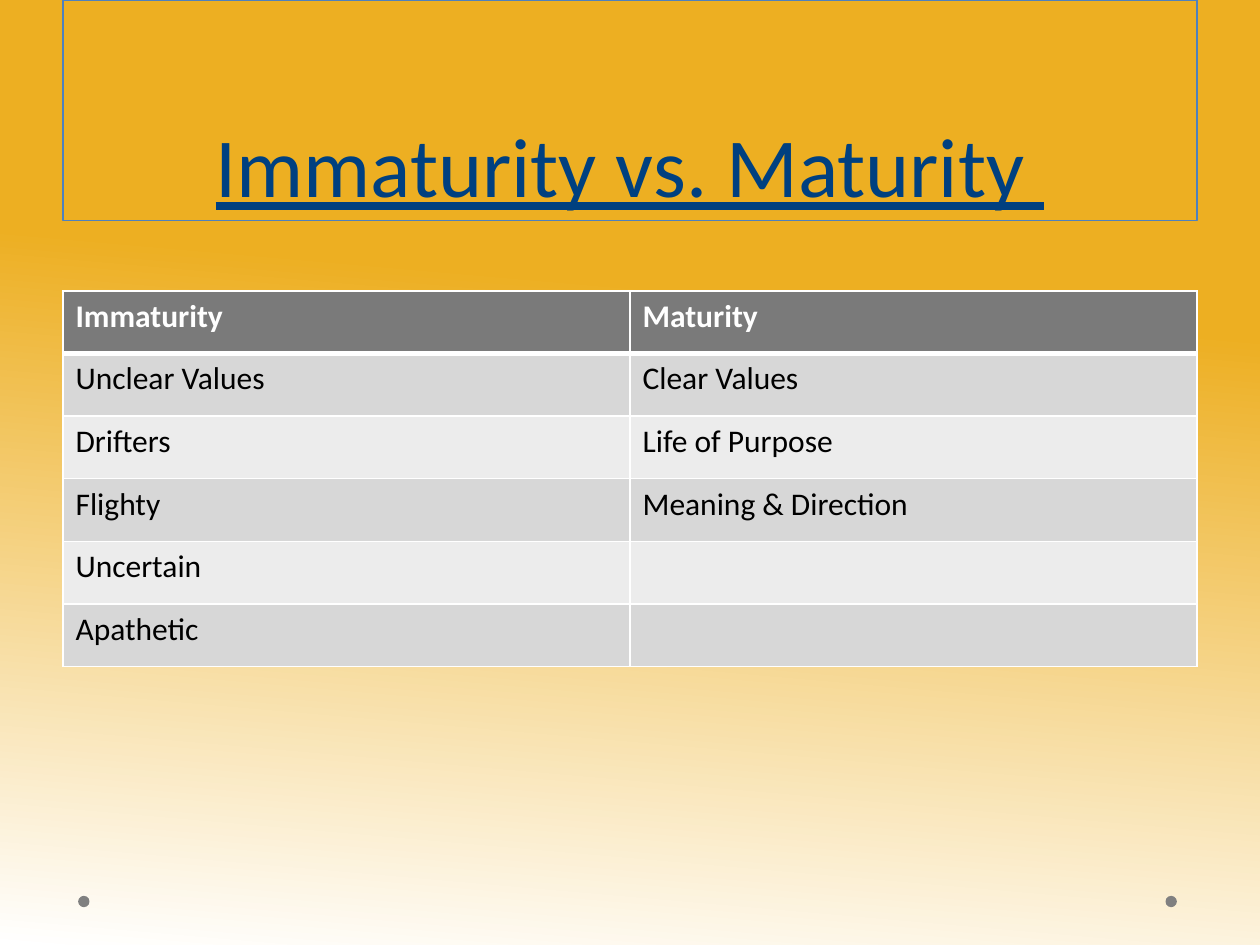
from dataclasses import dataclass

from lxml.etree import SubElement
from pptx import Presentation
from pptx.dml.color import RGBColor
from pptx.enum.shapes import MSO_SHAPE
from pptx.enum.text import MSO_ANCHOR, PP_ALIGN
from pptx.oxml.ns import qn
from pptx.util import Pt

EMU_PER_PX = 9144
FONT = "Calibri"
HEADER_FILL = "7A7A7A"
BAND_FILLS = ("D7D7D7", "ECECEC")
WHITE = "FFFFFF"


@dataclass
class Area:
    left: int
    top: int
    width: int
    height: int

    def emu(self) -> list[int]:
        return [px(n) for n in (self.left, self.top, self.width, self.height)]


TITLE_AREA = Area(50, 0, 900, 175)
TABLE_AREA = Area(50, 231, 900, 298)
DOTS = [Area(925, 711, 9, 9), Area(62, 711, 9, 9)]
ROWS = [
    ("Immaturity", "Maturity"),
    ("Unclear Values", "Clear Values"),
    ("Drifters", "Life of Purpose"),
    ("Flighty", "Meaning & Direction"),
    ("Uncertain", ""),
    ("Apathetic", ""),
]


def px(length: int) -> int:
    return length * EMU_PER_PX


def color(value: str) -> RGBColor:
    return RGBColor.from_string(value)


def style_font(font, size: int, value: str, bold: bool = False) -> None:
    font.name = FONT
    font.size = Pt(size)
    font.bold = bold
    font.color.rgb = color(value)


def draw_background(page) -> None:
    fill = page.background.fill
    fill.gradient()
    fill.gradient_angle = 265
    for stop, position, value in zip(fill.gradient_stops, (0.32, 1), ("EDAF22", WHITE)):
        stop.position = position
        stop.color.rgb = color(value)


def draw_dot(page, area: Area) -> None:
    dot = page.shapes.add_shape(MSO_SHAPE.OVAL, *area.emu())
    dot.shadow.inherit = False
    dot.fill.solid()
    dot.fill.fore_color.rgb = color("808080")
    dot.line.fill.background()


def draw_title(page, text: str) -> None:
    box = page.shapes.add_textbox(*TITLE_AREA.emu())
    box.line.color.rgb = color("4F81BD")
    box.line.width = Pt(0.75)
    frame = box.text_frame
    frame.word_wrap = True
    frame.vertical_anchor = MSO_ANCHOR.BOTTOM
    frame.text = text
    para = frame.paragraphs[0]
    para.alignment = PP_ALIGN.CENTER
    para.line_spacing = Pt(58)
    span = para.runs[0]
    style_font(span.font, 48, "004080")
    span.font.underline = True


def add_borders(cell, top: int, bottom: int) -> None:
    properties = cell._tc.get_or_add_tcPr()
    for side, width in (("lnL", 1), ("lnR", 1), ("lnT", top), ("lnB", bottom)):
        line = SubElement(properties, qn(f"a:{side}"), w=str(Pt(width)))
        SubElement(SubElement(line, qn("a:solidFill")), qn("a:srgbClr"), val=WHITE)


def draw_table(page, rows: list[tuple[str, str]]) -> None:
    table = page.shapes.add_table(len(rows), len(rows[0]), *TABLE_AREA.emu()).table
    for row, texts in enumerate(rows):
        header = row == 0
        for column, text in enumerate(texts):
            cell = table.cell(row, column)
            add_borders(cell, 3 if row == 1 else 1, 3 if header else 1)
            cell.fill.solid()
            cell.fill.fore_color.rgb = color(HEADER_FILL if header else BAND_FILLS[(row - 1) % 2])
            cell.text_frame.text = text
            for span in cell.text_frame.paragraphs[0].runs:
                style_font(span.font, 18, WHITE if header else "000000", header)


def main() -> None:
    deck = Presentation()
    deck.slide_width, deck.slide_height = px(1000), px(750)
    page = deck.slides.add_slide(deck.slide_layouts[6])
    draw_background(page)
    for area in DOTS:
        draw_dot(page, area)
    draw_title(page, "Immaturity vs. Maturity ")
    draw_table(page, ROWS)
    deck.save("out.pptx")


if __name__ == "__main__":
    main()
